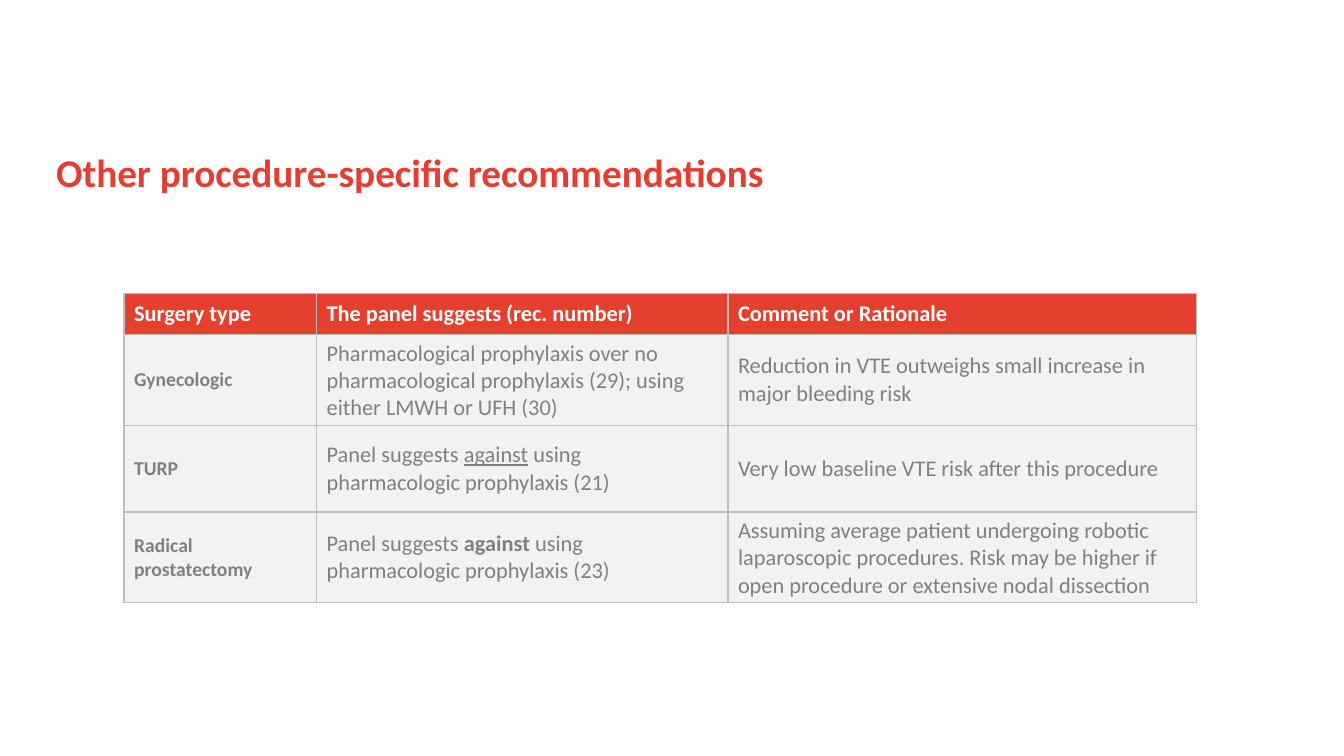
from lxml import etree
from pptx import Presentation, util as u
from pptx.dml.color import RGBColor
from pptx.enum import text
from pptx.oxml import ns

COLORS = {
    "title": "E53E31",
    "header": "E53F2F",
    "body": "F1F3F2",
    "border": "BFBFBF",
    "white": "FFFFFF",
    "gray": "808080",
}
COLUMN_WIDTHS = [1.91, 4.08, 4.65]
ROW_HEIGHTS = [0.41, 0.86, 0.86, 0.86]

# A cell is a list of (words, emphasis) runs.
ROWS = [
    [[("Surgery type", "")],
     [("The panel suggests (rec. number)", "")],
     [("Comment or Rationale", "")]],
    [[("Gynecologic", "")],
     [("Pharmacological prophylaxis over no pharmacological prophylaxis (29); "
       "using either LMWH or UFH (30)", "")],
     [("Reduction in VTE outweighs small increase in major bleeding risk", "")]],
    [[("TURP", "")],
     [("Panel suggests ", ""), ("against", "underline"),
      (" using pharmacologic prophylaxis (21)", "")],
     [("Very low baseline VTE risk after this procedure", "")]],
    [[("Radical prostatectomy", "")],
     [("Panel suggests ", ""), ("against", "bold"),
      (" using pharmacologic prophylaxis (23)", "")],
     [("Assuming average patient undergoing robotic laparoscopic procedures. "
       "Risk may be higher if open procedure or extensive nodal dissection", "")]],
]


class SlideBuilder:
    font_name = "Calibri"

    def __init__(self, slide):
        self.slide = slide

    def color(self, name):
        return RGBColor.from_string(COLORS[name])

    def format_run(self, run, size, color, bold=False):
        run.font.name = self.font_name
        run.font.size = u.Pt(size)
        run.font.bold = bold
        run.font.color.rgb = self.color(color)

    def add_title(self, words, left, top, width, height):
        box = self.slide.shapes.add_textbox(
            u.Inches(left), u.Inches(top), u.Inches(width), u.Inches(height))
        frame = box.text_frame
        frame.word_wrap = True
        frame.vertical_anchor = text.MSO_ANCHOR.TOP
        frame.text = words
        paragraph = frame.paragraphs[0]
        paragraph.line_spacing = 0.9
        self.format_run(paragraph.runs[0], 28, "title", bold=True)

    def add_borders(self, cell):
        properties = cell._tc.get_or_add_tcPr()
        for position, side in enumerate(("lnL", "lnR", "lnT", "lnB")):
            line = etree.Element(ns.qn(f"a:{side}"), w=str(u.Pt(1)))
            fill = etree.SubElement(line, ns.qn("a:solidFill"))
            etree.SubElement(fill, ns.qn("a:srgbClr"), val=COLORS["border"])
            properties.insert(position, line)

    def fill_cell(self, cell, runs, is_header, is_label):
        cell.fill.solid()
        cell.fill.fore_color.rgb = self.color("header" if is_header else "body")
        cell.vertical_anchor = text.MSO_ANCHOR.MIDDLE
        self.add_borders(cell)
        size = 14 if is_label and not is_header else 16
        color = "white" if is_header else "gray"
        paragraph = cell.text_frame.paragraphs[0]
        for words, emphasis in runs:
            run = paragraph.add_run()
            run.text = words
            bold = is_header or is_label or emphasis == "bold"
            self.format_run(run, size, color, bold)
            if emphasis == "underline":
                run.font.underline = True

    def add_table(self, rows, left, top):
        table = self.slide.shapes.add_table(
            len(rows), len(COLUMN_WIDTHS), u.Inches(left), u.Inches(top),
            u.Inches(sum(COLUMN_WIDTHS)), u.Inches(sum(ROW_HEIGHTS))).table
        for column, width in zip(table.columns, COLUMN_WIDTHS):
            column.width = u.Inches(width)
        for row, height in zip(table.rows, ROW_HEIGHTS):
            row.height = u.Inches(height)
        for row_index, row in enumerate(rows):
            for column_index, runs in enumerate(row):
                self.fill_cell(table.cell(row_index, column_index), runs,
                               row_index == 0, column_index == 0)


def main():
    presentation = Presentation()
    presentation.slide_width = u.Inches(13.33)
    presentation.slide_height = u.Inches(7.5)
    slide = presentation.slides.add_slide(presentation.slide_layouts[6])
    builder = SlideBuilder(slide)
    builder.add_title("Other procedure-specific recommendations",
                      0.46, 1.47, 12, 0.78)
    builder.add_table(ROWS, 1.23, 2.91)
    presentation.save("out.pptx")


if __name__ == "__main__":
    main()
